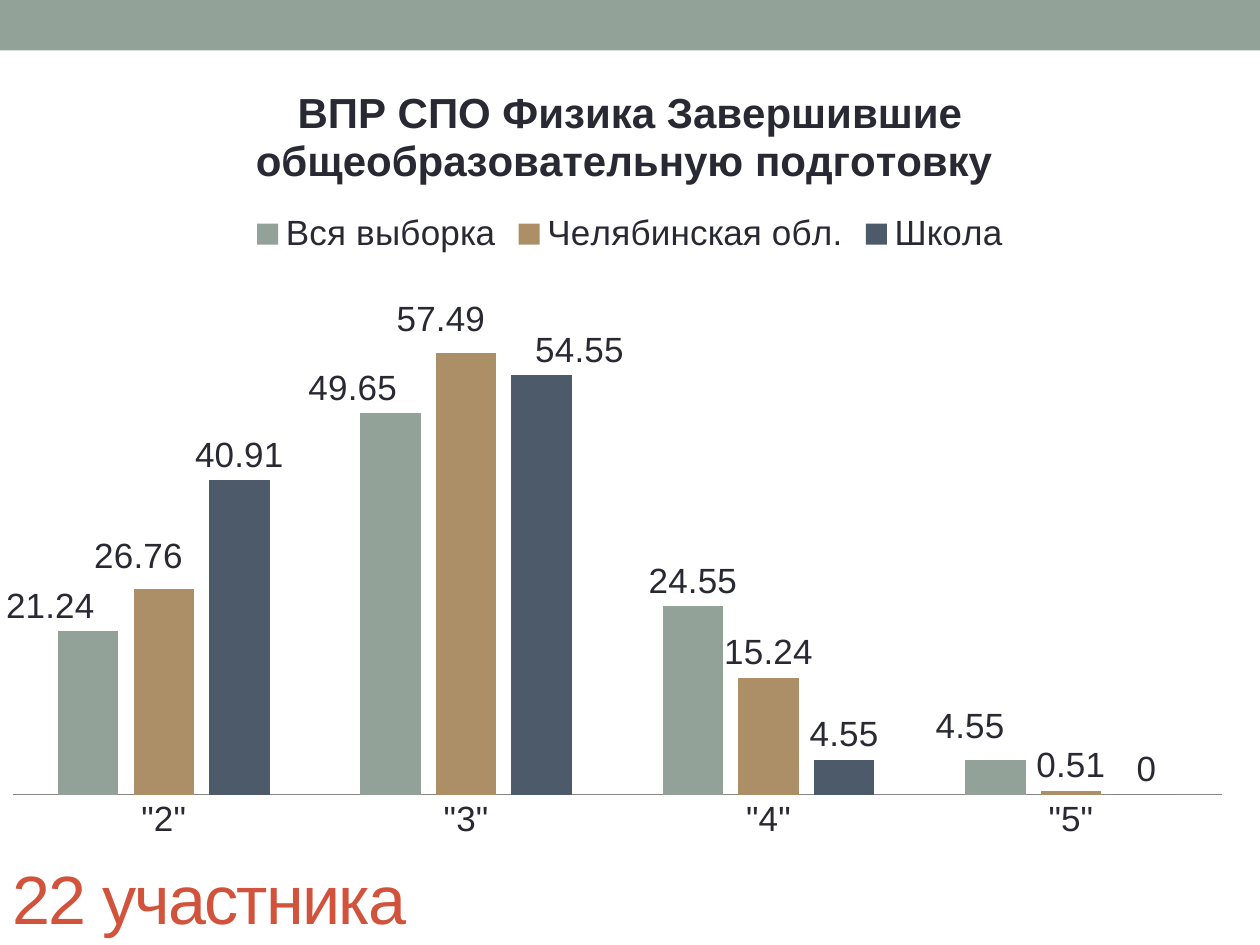
import pptx
import pptx.chart.data
import pptx.dml.color
import pptx.enum.chart
import pptx.enum.shapes
import pptx.enum.text
import pptx.oxml
import pptx.oxml.ns
import pptx.util
from pptx.util import Cm

RGB = pptx.dml.color.RGBColor
SAGE = RGB(0x93, 0xA2, 0x99)
TAN = RGB(0xAD, 0x8F, 0x67)
SLATE = RGB(0x4C, 0x5A, 0x6A)
INK = RGB(0x29, 0x29, 0x34)
RED = RGB(0xD2, 0x53, 0x3C)
GREY = RGB(0x86, 0x86, 0x86)
WIDTH, HEIGHT = Cm(25.4), Cm(19.05)

GRADES = ['"2"', '"3"', '"4"', '"5"']
# name, colour, values, label shifts by point (share of chart width and height)
SERIES = [
    ("Вся выборка", SAGE, (21.24, 49.65, 24.55, 4.55),
     {0: (-0.03, 0), 1: (-0.03, 0), 3: (-0.02, -0.01)}),
    ("Челябинская обл.", TAN, (26.76, 57.49, 15.24, 0.51),
     {0: (-0.02, -0.01), 1: (-0.02, -0.01)}),
    ("Школа", SLATE, (40.91, 54.55, 4.55, 0), {1: (0.03, 0)}),
]


def apply(obj, **values):
    for name, value in values.items():
        setattr(obj, name, value)


def style(font, size, color, **more):
    apply(font, name="Arial", size=pptx.util.Pt(size), **more)
    font.color.rgb = color


def layout(**values):
    """Return a manual chart layout element."""
    tags = "".join(f'<c:{k} val="{v}"/>' for k, v in values.items())
    space = pptx.oxml.ns.nsdecls("c")
    return pptx.oxml.parse_xml(
        f"<c:layout {space}><c:manualLayout>{tags}</c:manualLayout></c:layout>")


def place(parent, index, item):
    """Put a layout into a chart element in place of any earlier one."""
    for old in parent.xpath("c:layout"):
        parent.remove(old)
    parent.insert(index, item)


def add_band(slide):
    band = slide.shapes.add_shape(
        pptx.enum.shapes.MSO_SHAPE.RECTANGLE, 0, 0, WIDTH, Cm(1.02))
    band.shadow.inherit = False
    band.fill.solid()
    band.fill.fore_color.rgb = SAGE
    band.line.fill.background()


def set_title(chart, text):
    frame = chart.chart_title.text_frame
    frame.text = text
    style(frame.paragraphs[0].runs[0].font, 24, INK, bold=True)
    chart.chart_title.include_in_layout = False


def set_axes(chart):
    none = pptx.enum.chart.XL_TICK_MARK.NONE
    apply(chart.category_axis, major_tick_mark=none, minor_tick_mark=none)
    chart.category_axis.format.line.color.rgb = GREY
    apply(chart.value_axis, visible=False, has_major_gridlines=False,
          minimum_scale=0, maximum_scale=70)


def set_series(series, color, shifts):
    series.format.fill.solid()
    series.format.fill.fore_color.rgb = color
    above = pptx.enum.chart.XL_LABEL_POSITION.OUTSIDE_END
    apply(series.data_labels, show_value=True, position=above)
    style(series.data_labels.font, 20, INK)
    for point, (x, y) in shifts.items():
        label = series.points[point].data_label
        style(label.font, 20, INK)
        label.position = above
        spot = series.data_labels._element.xpath(
            f"c:dLbl[c:idx/@val='{point}']")[0]
        place(spot, 1, layout(x=x, y=y))


def add_chart(slide):
    data = pptx.chart.data.CategoryChartData()
    data.categories = GRADES
    for name, _, values, _ in SERIES:
        data.add_series(name, values)
    chart = slide.shapes.add_chart(
        pptx.enum.chart.XL_CHART_TYPE.COLUMN_CLUSTERED,
        0, Cm(1.12), WIDTH, Cm(16.2), data).chart
    style(chart.font, 20, INK)
    set_title(chart, "ВПР СПО Физика Завершившие общеобразовательную подготовку ")
    chart.has_legend = True
    apply(chart.legend, include_in_layout=False,
          position=pptx.enum.chart.XL_LEGEND_POSITION.TOP)
    set_axes(chart)
    plot = chart.plots[0]
    apply(plot, gap_width=150, overlap=-25, vary_by_categories=False)
    for series, (_, color, _, shifts) in zip(plot.series, SERIES):
        set_series(series, color, shifts)
    area = chart.element.xpath("c:chart/c:plotArea")[0]
    place(area, 0, layout(layoutTarget="inner", xMode="edge", yMode="edge",
                          x=0.01, y=0.25, w=0.96, h=0.67))


def add_note(slide, text):
    box = slide.shapes.add_textbox(0, Cm(17.12), Cm(9.5), Cm(1.93))
    frame = box.text_frame
    apply(frame, word_wrap=True,
          vertical_anchor=pptx.enum.text.MSO_ANCHOR.MIDDLE)
    run = frame.paragraphs[0].add_run()
    run.text = text
    style(run.font, 39, RED)
    run.font._element.set("spc", "-100")


def main():
    deck = pptx.Presentation()
    apply(deck, slide_width=WIDTH, slide_height=HEIGHT)
    slide = deck.slides.add_slide(deck.slide_layouts[6])
    add_band(slide)
    add_chart(slide)
    add_note(slide, "22 участника")
    deck.save("out.pptx")


if __name__ == "__main__":
    main()
